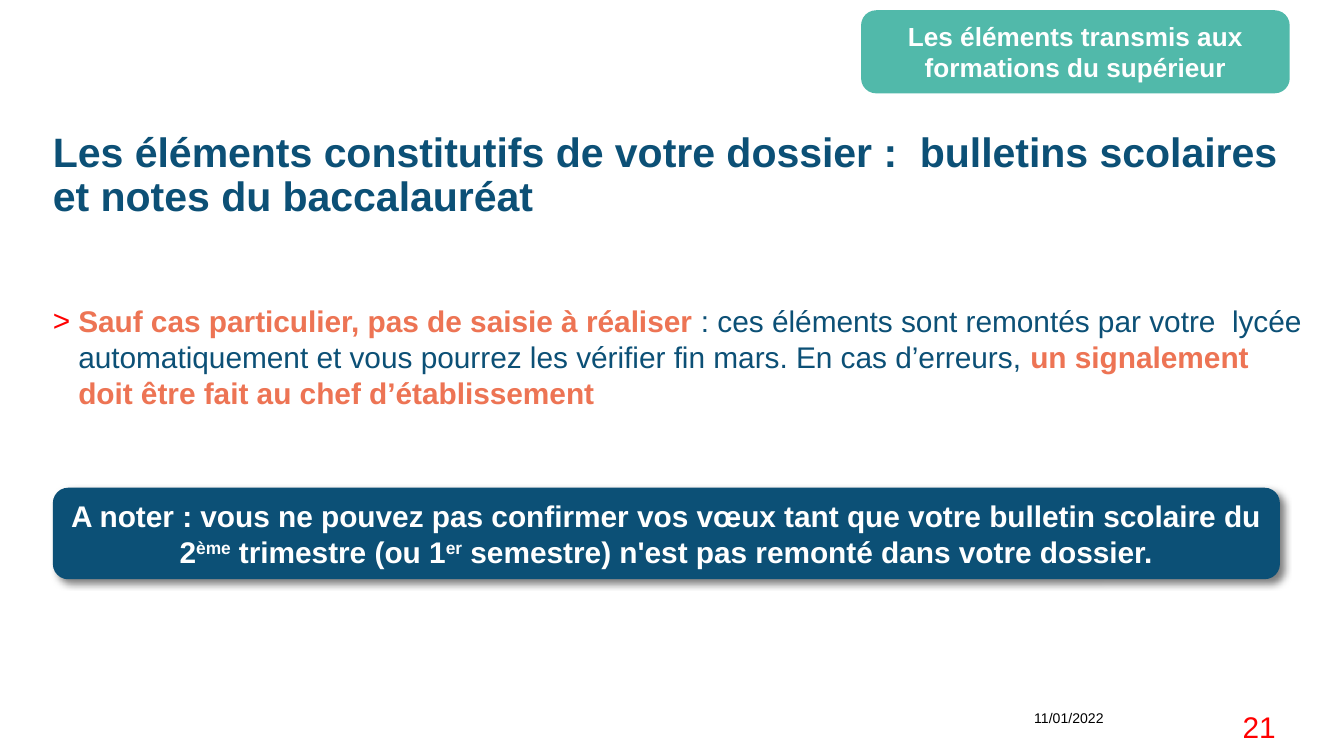
import lxml.etree
import pptx
import pptx.dml.color
import pptx.enum.shapes
import pptx.enum.text
import pptx.oxml.ns
import pptx.util

Cm = pptx.util.Cm
Align = pptx.enum.text.PP_ALIGN
Anchor = pptx.enum.text.MSO_ANCHOR
NAVY, TEAL, CORAL = "0C5076", "51B9AA", "ED7454"
WHITE, BLACK, RED = "FFFFFF", "000000", "FF0000"


def paint(color_format, value):
    """Give a font or a solid fill its hex colour."""
    color_format.rgb = pptx.dml.color.RGBColor.from_string(value)


def add_element(parent, tag, **attributes):
    """Append a drawing element with the given attributes."""
    return lxml.etree.SubElement(parent, pptx.oxml.ns.qn(tag), attributes)


def add_span(para, text, size, color, bold=False, raised=False):
    """Add one formatted run to a paragraph."""
    span = para.add_run()
    span.text = text
    span.font.name = "Arial"
    span.font.size = pptx.util.Pt(size)
    span.font.bold = bold
    paint(span.font.color, color)
    if raised:
        span._r.get_or_add_rPr().set("baseline", "30000")


def prepare_frame(shape, align, anchor=Anchor.TOP, margin=None):
    """Set wrapping, anchor and margins, and return the first paragraph."""
    frame = shape.text_frame
    frame.word_wrap = True
    frame.auto_size = pptx.enum.text.MSO_AUTO_SIZE.NONE
    frame.vertical_anchor = anchor
    if margin is not None:
        frame.margin_left = frame.margin_right = margin
        frame.margin_top = frame.margin_bottom = margin
    para = frame.paragraphs[0]
    para.alignment = align
    return para


def add_title(page, box):
    """Move and fill the title placeholder."""
    title = page.shapes.title
    title.left, title.top, title.width, title.height = box
    para = prepare_frame(title, Align.LEFT, margin=0)
    para.line_spacing = 0.9
    add_span(para, "Les éléments constitutifs de votre dossier :  bulletins "
             "scolaires et notes du baccalauréat", 22, NAVY, bold=True)


def add_body(page, box):
    """Place the bulleted explanation."""
    shape = page.shapes.add_textbox(*box)
    para = prepare_frame(shape, Align.LEFT, margin=0)
    shape.text_frame.margin_top = Cm(2)
    properties = para._p.get_or_add_pPr()
    properties.set("marL", str(Cm(0.48)))
    properties.set("indent", str(-Cm(0.48)))
    bullet_color = add_element(properties, "a:buClr")
    add_element(bullet_color, "a:srgbClr", val=RED)
    add_element(properties, "a:buFont", typeface="Arial")
    add_element(properties, "a:buChar", char=">")
    add_span(para, "Sauf cas particulier, pas de saisie à réaliser ",
             16, CORAL, bold=True)
    add_span(para, ": ces éléments sont remontés par votre  lycée "
             "automatiquement et vous pourrez les vérifier fin mars. "
             "En cas d’erreurs, ", 16, NAVY)
    add_span(para, "un signalement doit être fait au chef d’établissement",
             16, CORAL, bold=True)


def add_panel(page, box, color):
    """Add a filled rounded panel and return it with its paragraph."""
    kind = pptx.enum.shapes.MSO_SHAPE.ROUNDED_RECTANGLE
    panel = page.shapes.add_shape(kind, *box)
    panel.shadow.inherit = False
    panel.fill.solid()
    paint(panel.fill.fore_color, color)
    panel.line.fill.background()
    return panel, prepare_frame(panel, Align.CENTER, Anchor.MIDDLE)


def add_notice(page, box):
    """Place the shadowed notice panel."""
    panel, para = add_panel(page, box, NAVY)
    effects = panel._element.spPr.find(pptx.oxml.ns.qn("a:effectLst"))
    shadow = add_element(effects, "a:outerShdw",
                         blurRad=str(pptx.util.Pt(4)),
                         dist=str(pptx.util.Pt(3)),
                         dir="2700000", algn="tl", rotWithShape="0")
    shade = add_element(shadow, "a:srgbClr", val=BLACK)
    add_element(shade, "a:alpha", val="50000")
    parts = [
        ("A noter : vous ne pouvez pas confirmer vos vœux tant que votre "
         "bulletin scolaire du 2", False),
        ("ème", True),
        (" trimestre (ou 1", False),
        ("er", True),
        (" semestre) n'est pas remonté dans votre dossier.", False),
    ]
    for text, raised in parts:
        add_span(para, text, 16, WHITE, bold=True, raised=raised)


def add_section_tag(page, box):
    """Place the section label in the top corner."""
    panel, para = add_panel(page, box, TEAL)
    panel.line.width = pptx.util.Pt(2)
    panel.line.fill.solid()
    paint(panel.line.color, TEAL)
    add_span(para, "Les éléments transmis aux formations du supérieur",
             14, WHITE, bold=True)


def add_footer(page, box):
    """Place the date and the page number in two equal halves."""
    left, top, width, height = box
    half = width // 2
    entries = [("11/01/2022", 7.5, BLACK), ("21", 16, RED)]
    for index, (text, size, color) in enumerate(entries):
        shape = page.shapes.add_textbox(left + index * half, top, half, height)
        add_span(prepare_frame(shape, Align.RIGHT), text, size, color)


def main():
    """Build and save the deck."""
    deck = pptx.Presentation()
    deck.slide_width, deck.slide_height = Cm(25.4), Cm(14.29)
    page = deck.slides.add_slide(deck.slide_layouts.get_by_name("Title Only"))
    add_title(page, (Cm(1), Cm(2.49), Cm(23.4), Cm(1.7)))
    add_body(page, (Cm(1), Cm(3.73), Cm(23.72), Cm(7.65)))
    add_footer(page, (Cm(17.86), Cm(13.28), Cm(6.5), Cm(1)))
    add_notice(page, (Cm(1), Cm(9.22), Cm(23.19), Cm(1.73)))
    add_section_tag(page, (Cm(16.31), Cm(0.23), Cm(8.03), Cm(1.5)))
    deck.save("out.pptx")


if __name__ == "__main__":
    main()
